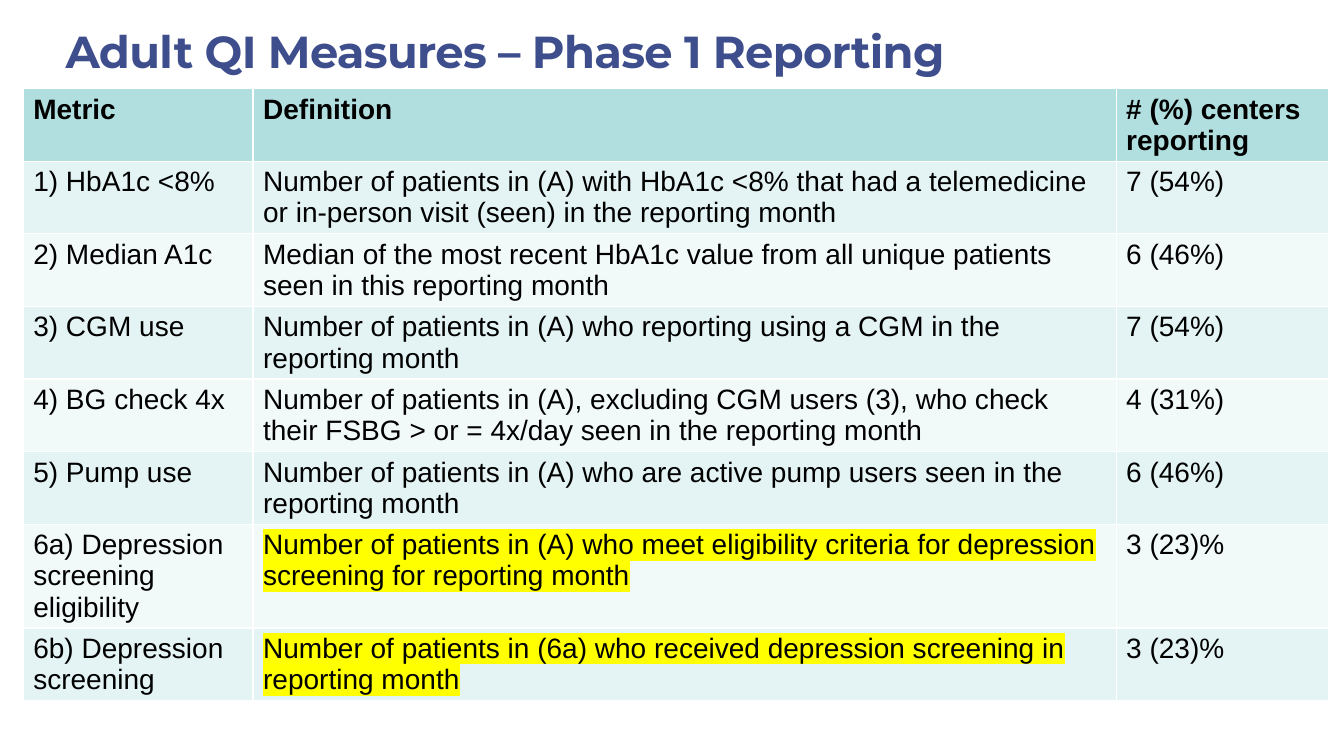
"""Build the slide listing adult QI measures and the centers reporting them."""
from lxml.etree import SubElement
from pptx import Presentation
from pptx.dml.color import RGBColor as RGB
from pptx.enum.text import MSO_ANCHOR as Anchor, MSO_AUTO_SIZE as AutoSize, PP_ALIGN as Align
from pptx.oxml.ns import qn
from pptx.util import Inches, Pt

COLORS = {
    "title": "3E4E8D",
    "text": "000000",
    "header": "B1DFE0",
    "odd": "E4F3F3",
    "even": "F2F9F9",
    "highlight": "FFFF00",
}
COLUMN_WIDTHS = [2.28, 8.56, 2.11]
ROW_HEIGHT = 0.41
HIGHLIGHTED_ROWS = (6, 7)
DEFINITION = 1

MEASURES = [
    ("Metric", "Definition", "# (%) centers reporting"),
    ("1) HbA1c <8%",
     "Number of patients in (A) with HbA1c <8% that had a telemedicine "
     "or in-person visit (seen) in the reporting month", "7 (54%)"),
    ("2) Median A1c",
     "Median of the most recent HbA1c value from all unique patients "
     "seen in this reporting month", "6 (46%)"),
    ("3) CGM use",
     "Number of patients in (A) who reporting using a CGM in the reporting month", "7 (54%)"),
    ("4) BG check 4x",
     "Number of patients in (A), excluding CGM users (3), who check "
     "their FSBG > or = 4x/day seen in the reporting month", "4 (31%)"),
    ("5) Pump use",
     "Number of patients in (A) who are active pump users seen in the reporting month",
     "6 (46%)"),
    ("6a) Depression screening eligibility",
     "Number of patients in (A) who meet eligibility criteria for depression "
     "screening for reporting month", "3 (23)%"),
    ("6b) Depression screening",
     "Number of patients in (6a) who received depression screening in reporting month",
     "3 (23)%"),
]


def add_run(paragraph, text, font_name, size, color, bold):
    run = paragraph.add_run()
    run.text = text
    run.font.name = font_name
    run.font.size = Pt(size)
    run.font.bold = bold
    run.font.color.rgb = RGB.from_string(COLORS[color])
    return run


prs = Presentation()
prs.slide_width, prs.slide_height = Inches(13.33), Inches(7.5)
slide = prs.slides.add_slide(prs.slide_layouts[5])

heading = slide.shapes.title
heading.left, heading.top = Inches(0.6), Inches(0.25)
heading.width, heading.height = Inches(12), Inches(0.5)
frame = heading.text_frame
frame.auto_size = AutoSize.NONE
frame.vertical_anchor = Anchor.MIDDLE
frame.margin_left = frame.margin_right = Inches(0.05)
frame.margin_top = frame.margin_bottom = Inches(0.05)
frame.paragraphs[0].alignment = Align.LEFT
heading_run = add_run(frame.paragraphs[0], "Adult QI Measures – Phase 1 Reporting",
                      "Montserrat", 32, "title", True)
heading_run.font._element.set("spc", "-50")

measures = slide.shapes.add_table(
    len(MEASURES), len(COLUMN_WIDTHS), Inches(0.23), Inches(0.88),
    Inches(sum(COLUMN_WIDTHS)), Inches(ROW_HEIGHT * len(MEASURES))).table
for column, width in zip(measures.columns, COLUMN_WIDTHS):
    column.width = Inches(width)

for r, measure in enumerate(MEASURES):
    measures.rows[r].height = Inches(ROW_HEIGHT)
    band = "header" if r == 0 else "odd" if r % 2 else "even"
    for c, wording in enumerate(measure):
        cell = measures.cell(r, c)
        cell.fill.solid()
        cell.fill.fore_color.rgb = RGB.from_string(COLORS[band])
        run = add_run(cell.text_frame.paragraphs[0], wording, "Arial", 20, "text", r == 0)
        if r in HIGHLIGHTED_ROWS and c == DEFINITION:
            marker = SubElement(run.font._element, qn("a:highlight"))
            SubElement(marker, qn("a:srgbClr")).set("val", COLORS["highlight"])
            run.font._element.find(qn("a:solidFill")).addnext(marker)

prs.save("out.pptx")
